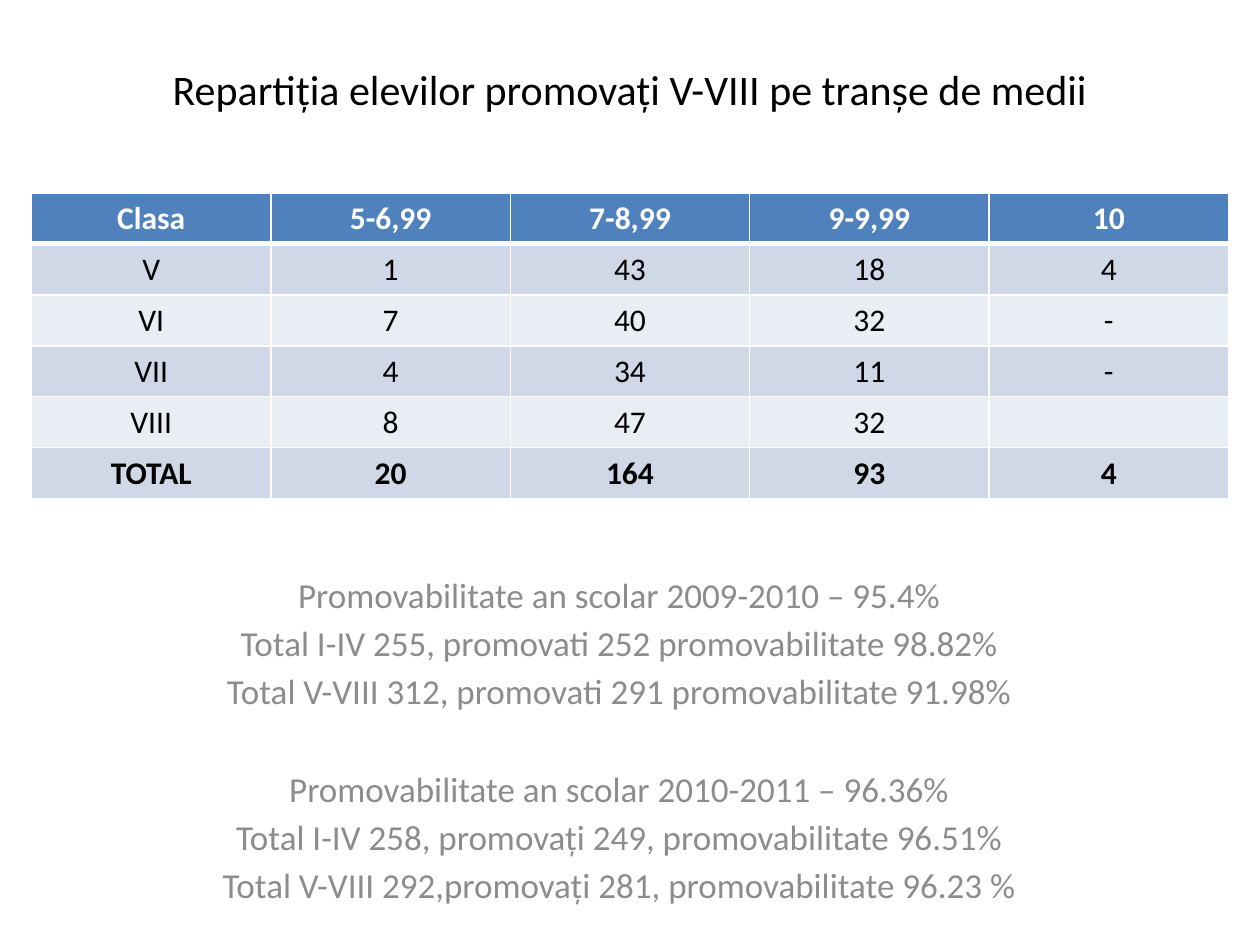
from pptx import Presentation
from pptx.dml.color import RGBColor
from pptx.enum.text import MSO_ANCHOR, PP_ALIGN
from pptx.oxml import parse_xml
from pptx.oxml.ns import nsdecls
from pptx.util import Inches, Pt

COLORS = {
    "black": "000000",
    "white": "FFFFFF",
    "gray": "8C8C8C",
    "head": "4F81BD",
    "dark": "D0D8E8",
    "light": "E9EDF4",
}


def write(frame, text, size=18, color="black", bold=False, before=0, first=True):
    para = frame.paragraphs[0] if first else frame.add_paragraph()
    para.alignment = PP_ALIGN.CENTER
    para.space_before = Pt(before)
    run = para.add_run()
    run.text = text
    run.font.name = "Calibri"
    run.font.size = Pt(size)
    run.font.bold = bold
    run.font.color.rgb = RGBColor.from_string(COLORS[color])


def border(cell, side, width):
    line = parse_xml(
        f'<a:{side} {nsdecls("a")} w="{Pt(width)}"><a:solidFill>'
        f'<a:srgbClr val="{COLORS["white"]}"/></a:solidFill></a:{side}>'
    )
    # Borders must stand before the fill
    props = cell._tc.get_or_add_tcPr()
    props.insert(len(props) - 1, line)


deck = Presentation()
deck.slide_width = Inches(10)
deck.slide_height = Inches(7.5)
slide = deck.slides.add_slide(deck.slide_layouts[6])

# Title
title = slide.shapes.add_textbox(Inches(0.75), Inches(0.33), Inches(8.5), Inches(0.75))
title.text_frame.word_wrap = True
title.text_frame.vertical_anchor = MSO_ANCHOR.MIDDLE
write(title.text_frame, "Repartiția elevilor promovați V-VIII pe tranșe de medii", size=24)

# Pass rates for two school years
rates = [
    [
        "Promovabilitate an scolar 2009-2010 – 95.4%",
        "Total I-IV 255, promovati 252 promovabilitate 98.82%",
        "Total V-VIII 312, promovati 291 promovabilitate 91.98%",
    ],
    [
        "Promovabilitate an scolar 2010-2011 – 96.36%",
        "Total I-IV 258, promovați 249, promovabilitate 96.51%",
        "Total V-VIII 292,promovați 281, promovabilitate 96.23 %",
    ],
]
body = slide.shapes.add_textbox(Inches(0.25), Inches(4.5), Inches(9.33), Inches(2.5))
body.text_frame.word_wrap = True
for y, year in enumerate(rates):
    for n, text in enumerate(year):
        # The second year starts one line lower
        gap = 31.6 if y and n == 0 else 3.6
        write(body.text_frame, text, size=20, color="gray", before=gap,
              first=y == n == 0)

# Grade table
rows = [
    ["Clasa", "5-6,99", "7-8,99", "9-9,99", "10"],
    ["V", "1", "43", "18", "4"],
    ["VI", "7", "40", "32", "-"],
    ["VII", "4", "34", "11", "-"],
    ["VIII", "8", "47", "32", ""],
    ["TOTAL", "20", "164", "93", "4"],
]
last = len(rows) - 1
table = slide.shapes.add_table(
    len(rows), len(rows[0]), Inches(0.25), Inches(1.53), Inches(9.5), Inches(2.43)
).table
for r, row in enumerate(rows):
    fill = "head" if r == 0 else "dark" if r % 2 else "light"
    for c, text in enumerate(row):
        cell = table.cell(r, c)
        cell.fill.solid()
        cell.fill.fore_color.rgb = RGBColor.from_string(COLORS[fill])
        for side in ("lnL", "lnR", "lnT", "lnB"):
            thick = (r, side) in ((0, "lnB"), (1, "lnT"))
            border(cell, side, 3 if thick else 1)
        if text:
            write(cell.text_frame, text, color="black" if r else "white",
                  bold=r in (0, last))

deck.save("out.pptx")
